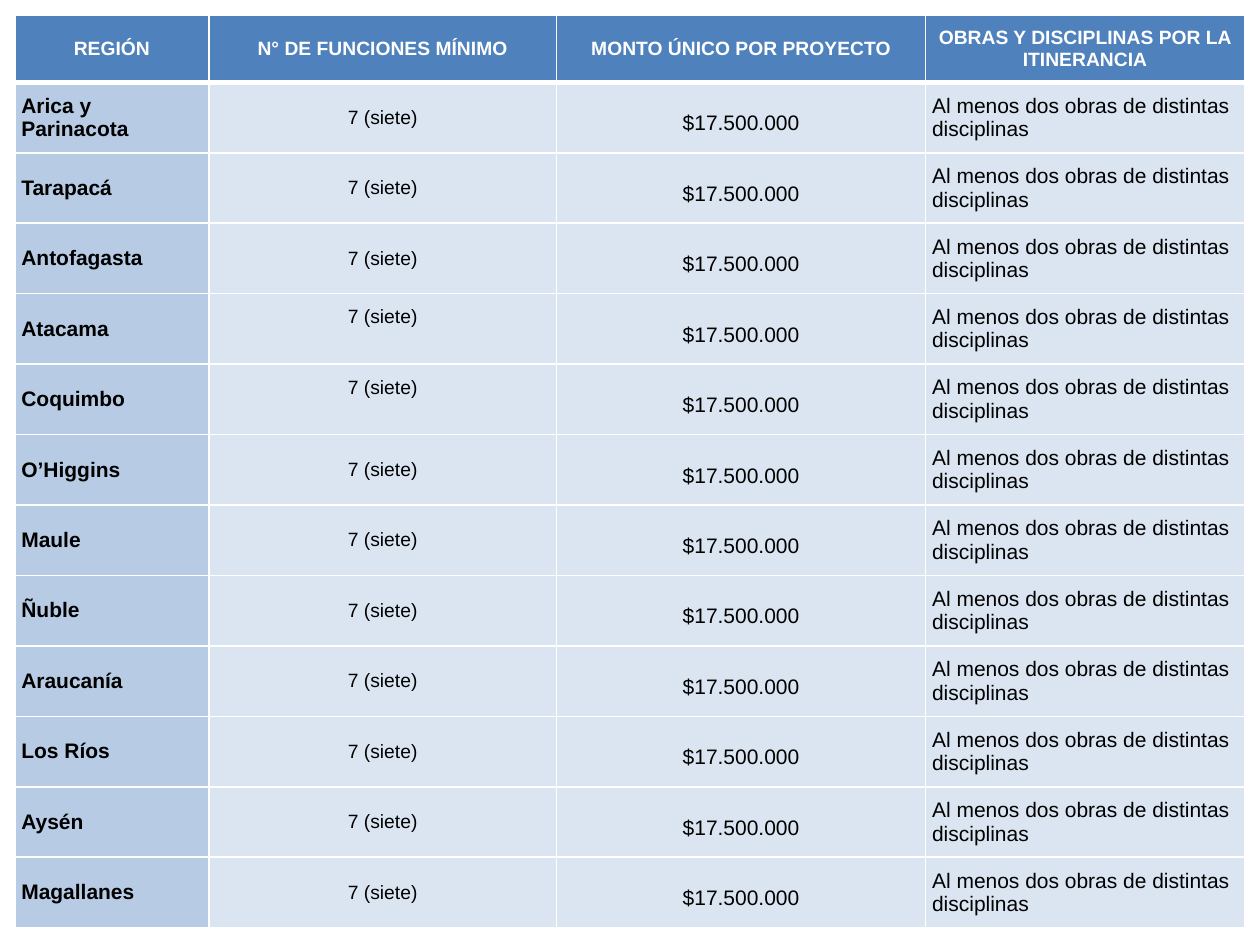
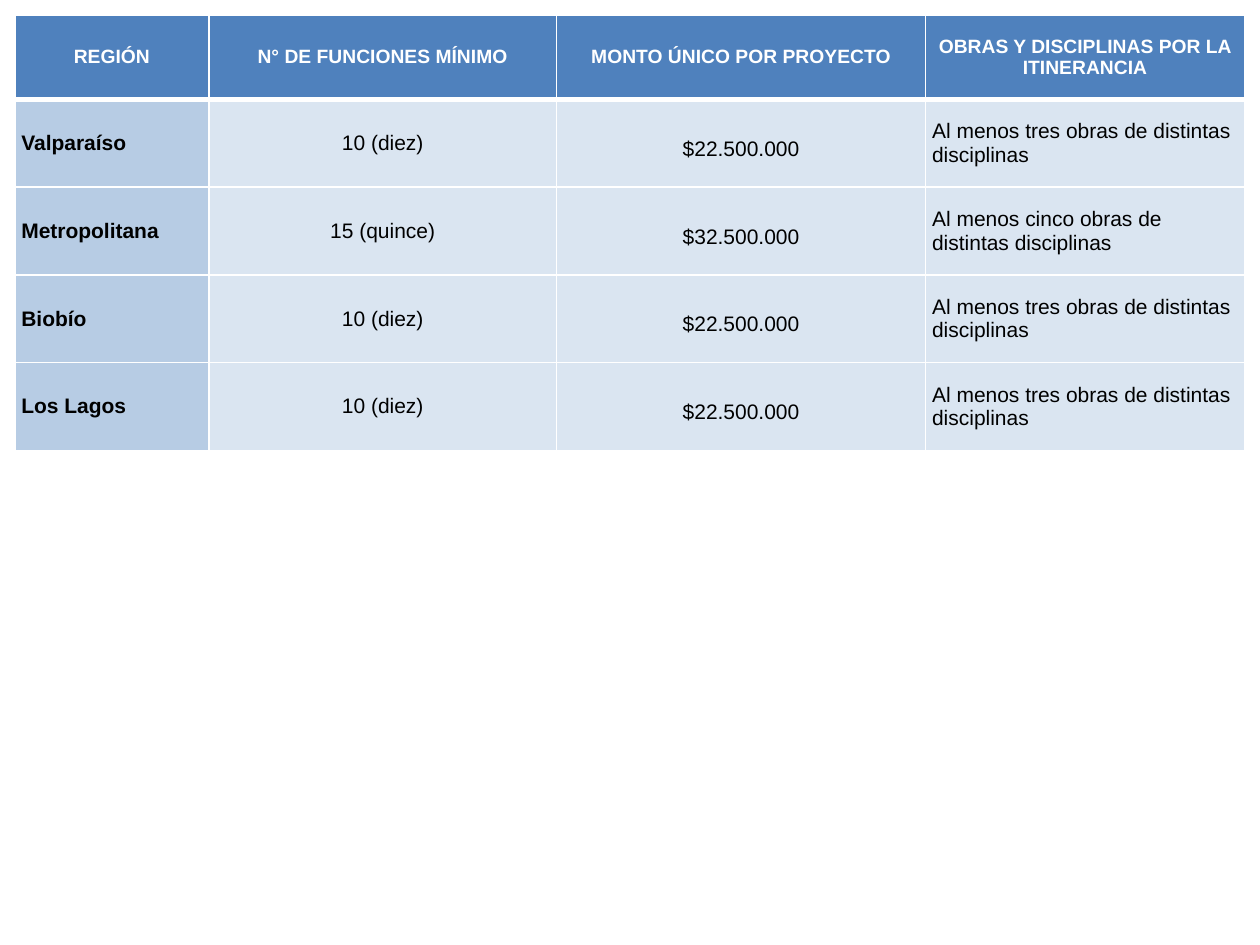
"""Build two slides listing the regional funding conditions for touring projects."""
from typing import NamedTuple

from lxml import etree
from pptx import Presentation
from pptx.dml.color import RGBColor
from pptx.enum.text import MSO_ANCHOR, PP_ALIGN
from pptx.oxml.ns import qn
from pptx.util import Cm, Pt

LEFT, CENTER = PP_ALIGN.LEFT, PP_ALIGN.CENTER
MIDDLE = MSO_ANCHOR.MIDDLE

FONT = "Arial"
WHITE, BLACK = "FFFFFF", "000000"
HEADER_BLUE, REGION_BLUE, DATA_BLUE = "4F81BD", "B7CCE4", "DAE5F1"
EDGE = 0.3
INSET = 0.13
RAISED_INSET = 0.61
THIN, THICK = 1, 3
HEADER_SIZE, BODY_SIZE = 11, 12


class Column(NamedTuple):
    """Heading, width in cm and body format of one column."""

    heading: str
    width: float
    fill: str = DATA_BLUE
    align: PP_ALIGN = LEFT
    bold: bool = False
    spacing: float = 1.0


class Region(NamedTuple):
    """Conditions that apply to one region."""

    name: str
    performances: str
    amount: str
    works: str


class FundingTable(NamedTuple):
    """Regions of one slide with row heights in cm."""

    regions: list[Region]
    header_height: float
    row_height: float
    performances_size: int = BODY_SIZE
    raised: tuple[str, ...] = ()


COLUMNS = [
    Column("REGIÓN", 3.91, fill=REGION_BLUE, bold=True),
    Column("N° DE FUNCIONES MÍNIMO", 7.01, align=CENTER),
    Column("MONTO ÚNICO POR PROYECTO", 7.44, align=CENTER, spacing=1.5),
    Column("OBRAS Y DISCIPLINAS POR LA ITINERANCIA", 6.43),
]
PERFORMANCES = 1


def conditions(name: str, performances: str, millions: str, works: str) -> Region:
    """Return a region with its amount and works written out."""
    return Region(name, performances, f"${millions}00.000",
                  f"Al menos {works} obras de distintas disciplinas")


STANDARD_REGIONS = [
    "Arica y Parinacota", "Tarapacá", "Antofagasta", "Atacama", "Coquimbo",
    "O’Higgins", "Maule", "Ñuble", "Araucanía", "Los Ríos", "Aysén", "Magallanes",
]
TABLES = [
    FundingTable(
        [conditions(name, "7 (siete)", "17.5", "dos") for name in STANDARD_REGIONS],
        header_height=1.36, row_height=1.42, performances_size=11,
        raised=("Atacama", "Coquimbo"),
    ),
    FundingTable(
        [
            conditions("Valparaíso", "10 (diez)", "22.5", "tres"),
            conditions("Metropolitana", "15 (quince)", "32.5", "cinco"),
            conditions("Biobío", "10 (diez)", "22.5", "tres"),
            conditions("Los Lagos", "10 (diez)", "22.5", "tres"),
        ],
        header_height=1.7, row_height=1.77,
    ),
]


def rgb(value: str) -> RGBColor:
    """Convert a hex string to a colour."""
    return RGBColor.from_string(value)


def write(cell, text: str, *, size: int = BODY_SIZE, color: str = BLACK,
          bold: bool = False, align: PP_ALIGN = LEFT, spacing: float = 1.0) -> None:
    """Write formatted text into a cell."""
    paragraph = cell.text_frame.paragraphs[0]
    paragraph.alignment = align
    paragraph.line_spacing = spacing
    run = paragraph.add_run()
    run.text = text
    run.font.name = FONT
    run.font.size = Pt(size)
    run.font.bold = bold
    run.font.color.rgb = rgb(color)


def style_cell(cell, fill: str, top: int = THIN, bottom: int = THIN,
               bottom_inset: float = INSET) -> None:
    """Set the fill, insets and white borders of a cell."""
    cell.fill.solid()
    cell.fill.fore_color.rgb = rgb(fill)
    cell.vertical_anchor = MIDDLE
    cell.margin_left = cell.margin_right = cell.margin_top = Cm(INSET)
    cell.margin_bottom = Cm(bottom_inset)
    properties = cell._tc.get_or_add_tcPr()
    widths = {"a:lnL": THIN, "a:lnR": THIN, "a:lnT": top, "a:lnB": bottom}
    for position, (side, width) in enumerate(widths.items()):
        line = etree.Element(qn(side), w=str(Pt(width)))
        paint = etree.SubElement(line, qn("a:solidFill"))
        etree.SubElement(paint, qn("a:srgbClr"), val=WHITE)
        properties.insert(position, line)


def fill_header(table) -> None:
    """Write the column headings and set the column widths."""
    for index, column in enumerate(COLUMNS):
        table.columns[index].width = Cm(column.width)
        cell = table.cell(0, index)
        style_cell(cell, HEADER_BLUE, bottom=THICK)
        write(cell, column.heading, size=HEADER_SIZE, color=WHITE, bold=True, align=CENTER)


def fill_region(table, row: int, region: Region, funding: FundingTable) -> None:
    """Write the conditions of one region into a row."""
    for index, (column, text) in enumerate(zip(COLUMNS, region)):
        is_performances = index == PERFORMANCES
        raised = is_performances and region.name in funding.raised
        cell = table.cell(row, index)
        style_cell(cell, column.fill, top=THICK if row == 1 else THIN,
                   bottom_inset=RAISED_INSET if raised else INSET)
        write(cell, text, size=funding.performances_size if is_performances else BODY_SIZE,
              bold=column.bold, align=column.align, spacing=column.spacing)


def add_funding_slide(presentation, funding: FundingTable) -> None:
    """Add a slide with the table of its regions."""
    slide = presentation.slides.add_slide(presentation.slide_layouts[6])
    heights = [funding.header_height] + [funding.row_height] * len(funding.regions)
    width = sum(column.width for column in COLUMNS)
    table = slide.shapes.add_table(len(heights), len(COLUMNS), Cm(EDGE), Cm(EDGE),
                                   Cm(width), Cm(sum(heights))).table
    table.horz_banding = False
    for row, height in zip(table.rows, heights):
        row.height = Cm(height)
    fill_header(table)
    for row, region in enumerate(funding.regions, start=1):
        fill_region(table, row, region, funding)


def main() -> None:
    """Build and save the presentation."""
    presentation = Presentation()
    presentation.slide_width, presentation.slide_height = Cm(25.4), Cm(19.05)
    for funding in TABLES:
        add_funding_slide(presentation, funding)
    presentation.save("out.pptx")


if __name__ == "__main__":
    main()
